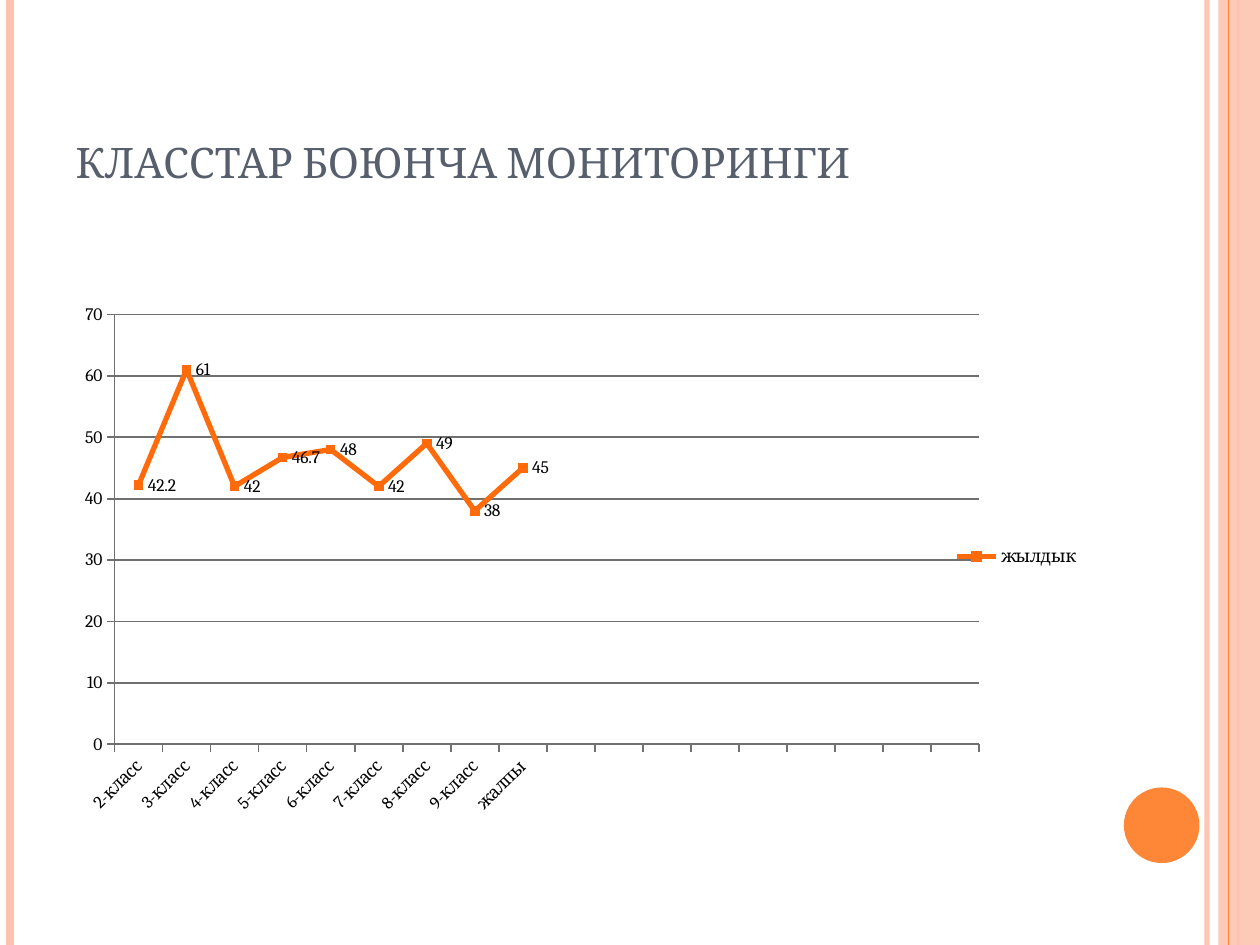
from lxml.etree import SubElement
from pptx import Presentation
from pptx.chart.data import CategoryChartData
from pptx.dml.color import RGBColor
from pptx.enum.chart import (XL_CHART_TYPE, XL_LABEL_POSITION, XL_LEGEND_POSITION,
                             XL_MARKER_STYLE, XL_TICK_MARK)
from pptx.enum.shapes import MSO_CONNECTOR, MSO_SHAPE
from pptx.enum.text import MSO_ANCHOR, PP_ALIGN
from pptx.oxml import parse_xml
from pptx.oxml.ns import qn
from pptx.util import Inches, Pt

FONT = "Cambria"
PEACH, ORANGE, SERIES, GREY = "FEC3AE", "FE8637", "FF6A0B", "707070"


def paint(color_format, hex_color, alpha=None):
    """Set a solid colour, with an optional opacity in percent."""
    color_format.solid()
    color_format.fore_color.rgb = RGBColor.from_string(hex_color)
    if alpha:
        parent = color_format.fore_color._xFill
        SubElement(parent.find(qn("a:srgbClr")), qn("a:alpha"), val=str(alpha * 1000))


prs = Presentation()
prs.slide_width, prs.slide_height = Inches(10), Inches(7.5)
slide = prs.slides.add_slide(prs.slide_layouts[5])
shapes = slide.shapes

# Side stripes and the round badge
band = shapes.add_shape(MSO_SHAPE.RECTANGLE, Inches(9.67), 0, Inches(0.33), Inches(7.5))
paint(band.fill, PEACH, 87)
badge = shapes.add_shape(MSO_SHAPE.OVAL, Inches(8.92), Inches(6.25), Inches(0.6), Inches(0.6))
paint(badge.fill, ORANGE)
for decoration in (band, badge):
    decoration.line.fill.background()
    decoration.shadow.inherit = False

stripes = [(9.58, PEACH, 3, 93), (0.08, PEACH, 4.5, None),
           (9.83, PEACH, 1.5, None), (9.75, ORANGE, 0.75, None)]
for x, color, width, alpha in stripes:
    stripe = shapes.add_connector(MSO_CONNECTOR.STRAIGHT, Inches(x), 0, Inches(x), Inches(7.5))
    stripe.line.width = Pt(width)
    paint(stripe.line.fill, color, alpha)
    SubElement(stripe._element.spPr, qn("a:effectLst"))

# Title
title = shapes.title
title.left, title.top = Inches(0.5), Inches(0.3)
title.width, title.height = Inches(8.17), Inches(1.25)
title.text_frame.word_wrap = True
title.text_frame.vertical_anchor = MSO_ANCHOR.BOTTOM
heading = title.text_frame.paragraphs[0]
heading.alignment = PP_ALIGN.LEFT
run = heading.add_run()
run.text = "класстар боюнча мониторинги"
run.font.name, run.font.size = FONT, Pt(30)
paint(run.font.fill, "575F6D")
run.font._element.set("cap", "small")

# Results by class; the axis keeps free places after the total
scores = [42.2, 61, 42, 46.7, 48, 42, 49, 38, 45]
classes = [f"{grade}-класс" for grade in range(2, 10)] + ["жалпы"]
free_places = 9
data = CategoryChartData()
data.categories = classes + [""] * free_places
data.add_series("жылдык", scores + [None] * free_places)
chart = shapes.add_chart(XL_CHART_TYPE.LINE_MARKERS, Inches(0.5), Inches(1.75),
                         Inches(8.17), Inches(5.33), data).chart
chart.has_title = False
chart.font.name, chart.font.size = FONT, Pt(10)
paint(chart.font.fill, "000000")
chart.has_legend = True
chart.legend.position = XL_LEGEND_POSITION.RIGHT
chart.legend.include_in_layout = False

class_axis, score_axis = chart.category_axis, chart.value_axis
score_axis.minimum_scale, score_axis.maximum_scale, score_axis.major_unit = 0, 70, 10
score_axis.has_major_gridlines = True
for axis in (class_axis, score_axis):
    axis.major_tick_mark = XL_TICK_MARK.OUTSIDE
    axis.minor_tick_mark = XL_TICK_MARK.NONE
for line in (class_axis.format.line, score_axis.format.line,
             score_axis.major_gridlines.format.line):
    line.width = Pt(1)
    paint(line.fill, GREY)
class_axis.tick_labels.font.size = Pt(10)
class_axis._element.find(qn("c:txPr")).find(qn("a:bodyPr")).set("rot", "-2700000")

plot = chart.plots[0]
plot.vary_by_categories = False
plot.has_data_labels = True
plot.data_labels.show_value = True
plot.data_labels.position = XL_LABEL_POSITION.RIGHT
series = plot.series[0]
series.smooth = False
series.format.line.width = Pt(3)
paint(series.format.line.fill, SERIES)
series.marker.style = XL_MARKER_STYLE.SQUARE
series.marker.size = 5
paint(series.marker.format.fill, SERIES)
paint(series.marker.format.line.fill, SERIES)

# Fixed inner plot area, as fractions of the chart
plot_area = chart._chartSpace.chart.plotArea
for old_layout in plot_area.findall(qn("c:layout")):
    plot_area.remove(old_layout)
plot_area.insert(0, parse_xml(
    '<c:layout xmlns:c="http://schemas.openxmlformats.org/drawingml/2006/chart">'
    '<c:manualLayout><c:layoutTarget val="inner"/>'
    '<c:xMode val="edge"/><c:yMode val="edge"/>'
    '<c:x val="0.05"/><c:y val="0.14"/><c:w val="0.84"/><c:h val="0.64"/>'
    '</c:manualLayout></c:layout>'))

prs.save("out.pptx")
